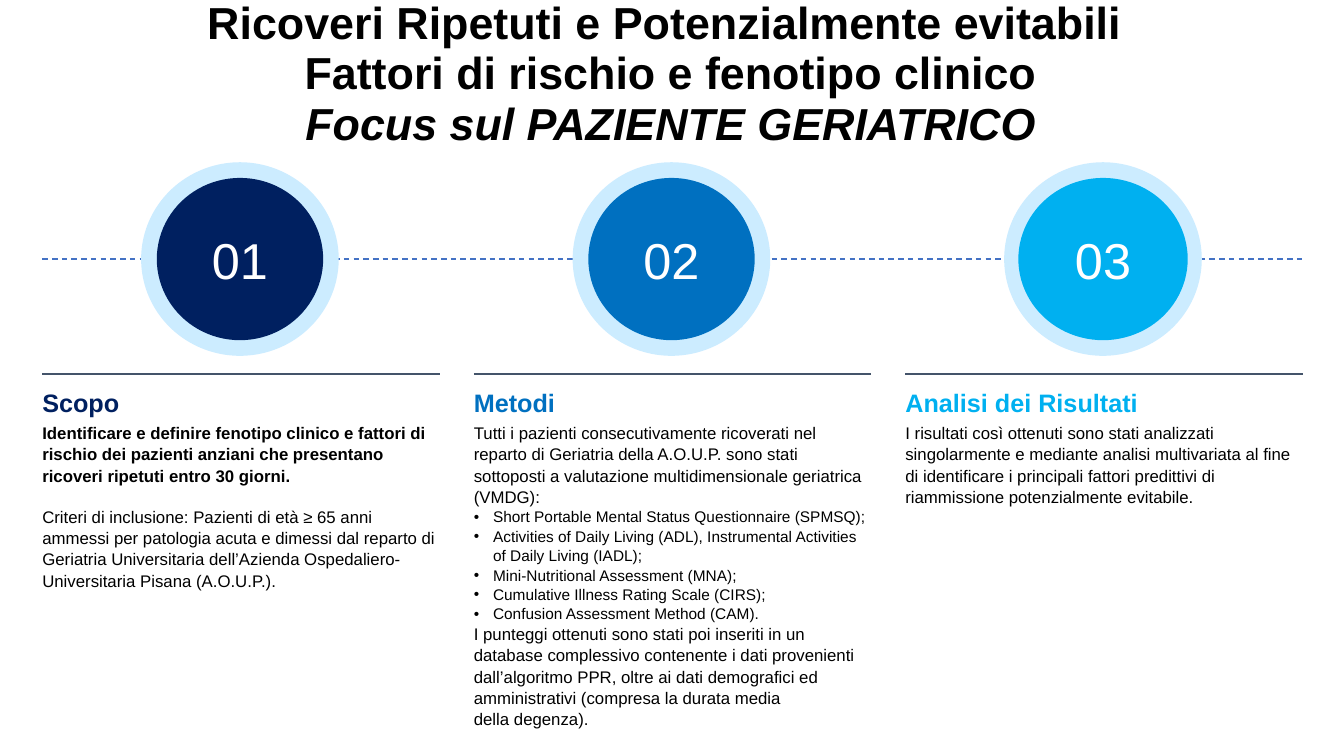
from lxml import etree
from pptx import Presentation
from pptx.dml.color import RGBColor
from pptx.enum.dml import MSO_LINE
from pptx.enum.shapes import MSO_CONNECTOR, MSO_SHAPE
from pptx.enum.text import MSO_ANCHOR, PP_ALIGN
from pptx.oxml.ns import qn
from pptx.util import Inches, Pt

STRAIGHT = MSO_CONNECTOR.STRAIGHT
OVAL = MSO_SHAPE.OVAL
DASH = MSO_LINE.DASH
CENTER = PP_ALIGN.CENTER
MIDDLE, BOTTOM = MSO_ANCHOR.MIDDLE, MSO_ANCHOR.BOTTOM

# (text, italic); the first line's closing space shifts it slightly left
TITLE = [
    ("Ricoveri Ripetuti e Potenzialmente evitabili ", False),
    ("Fattori di rischio e fenotipo clinico", False),
    ("Focus sul PAZIENTE GERIATRICO", True),
]

# Body lines are (style, text)
STEPS = [
    {"number": "01", "heading": "Scopo", "color": "002060", "disc_width": 1.65, "body": [
        ("bold", "Identificare e definire fenotipo clinico e fattori di rischio dei pazienti "
                 "anziani che presentano ricoveri ripetuti entro 30 giorni."),
        ("spaced", "Criteri di inclusione: Pazienti di età ≥ 65 anni ammessi per patologia acuta "
                   "e dimessi dal reparto di Geriatria Universitaria dell’Azienda "
                   "Ospedaliero-Universitaria Pisana (A.O.U.P.)."),
    ]},
    {"number": "02", "heading": "Metodi", "color": "0070C0", "disc_width": 1.65, "body": [
        ("plain", "Tutti i pazienti consecutivamente ricoverati nel reparto di Geriatria della "
                  "A.O.U.P. sono stati sottoposti a valutazione multidimensionale geriatrica "
                  "(VMDG):"),
        ("bullet", "Short Portable Mental Status Questionnaire (SPMSQ);"),
        ("bullet", "Activities of Daily Living (ADL), Instrumental Activities of Daily Living "
                   "(IADL);"),
        ("bullet", "Mini-Nutritional Assessment (MNA);"),
        ("bullet", "Cumulative Illness Rating Scale (CIRS);"),
        ("bullet", "Confusion Assessment Method (CAM)."),
        ("plain", "I punteggi ottenuti sono stati poi inseriti in un database complessivo "
                  "contenente i dati provenienti dall’algoritmo PPR, oltre ai dati demografici "
                  "ed amministrativi (compresa la durata media"),
        ("plain", "della degenza)."),
    ]},
    {"number": "03", "heading": "Analisi dei Risultati", "color": "00B0F0", "disc_width": 1.68,
     "body": [
        ("plain", "I risultati così ottenuti sono stati analizzati singolarmente e mediante "
                  "analisi multivariata al fine di identificare i principali fattori predittivi "
                  "di riammissione potenzialmente evitabile."),
    ]},
]

THEME = {
    "font": "Arial", "text": "000000", "number_text": "FFFFFF", "halo": "CCECFF",
    "timeline": "4472C4", "rule": "44546A",
    "title_size": 32, "number_size": 36, "heading_size": 18, "body_size": 12, "bullet_size": 11,
    "title_spacing": 0.94, "text_spacing": 1.05,
}

LEFT, RIGHT = 0.42, 12.91
COLUMN_PITCH, COLUMN_WIDTH = 4.28, 3.94
HALO_WIDTH, HALO_HEIGHT, DISC_HEIGHT = 1.96, 1.92, 1.61
HALO_CENTER = 1.96  # from the left of the column
TIMELINE_Y, RULE_Y, TEXT_Y, TEXT_HEIGHT = 2.57, 3.71, 3.83, 1.59
BULLET_INDENT = 0.19


def add_line(slide, left, right, y, color, width, dash=None):
    line = slide.shapes.add_connector(STRAIGHT, Inches(left), Inches(y), Inches(right), Inches(y))
    line.line.color.rgb = RGBColor.from_string(color)
    line.line.width = Pt(width)
    if dash is not None:
        line.line.dash_style = dash
    etree.SubElement(line._element.spPr, qn("a:effectLst"))


def add_disc(slide, center_x, width, height, color):
    disc = slide.shapes.add_shape(OVAL, Inches(center_x - width / 2),
                                  Inches(TIMELINE_Y - height / 2), Inches(width), Inches(height))
    disc.shadow.inherit = False
    disc.fill.solid()
    disc.fill.fore_color.rgb = RGBColor.from_string(color)
    disc.line.fill.background()
    return disc


def add_text_box(slide, left, top, width, height):
    box = slide.shapes.add_textbox(Inches(left), Inches(top), Inches(width), Inches(height))
    box.text_frame.word_wrap = True
    return box.text_frame


def add_run(paragraph, text, size, color, bold=False, italic=False):
    run = paragraph.add_run()
    run.text = text
    run.font.name = THEME["font"]
    run.font.size = Pt(size)
    run.font.bold = bold
    run.font.italic = italic
    run.font.color.rgb = RGBColor.from_string(color)


def add_bullet(paragraph):
    properties = paragraph._p.get_or_add_pPr()
    properties.set("marL", str(Inches(BULLET_INDENT)))
    properties.set("indent", str(-Inches(BULLET_INDENT)))
    etree.SubElement(properties, qn("a:buFont"), typeface=THEME["font"])
    etree.SubElement(properties, qn("a:buChar"), char="•")


def add_title(slide):
    frame = add_text_box(slide, 0.41, 0.64, 12.49, 0.9)
    frame.vertical_anchor = BOTTOM
    for index, (text, italic) in enumerate(TITLE):
        paragraph = frame.add_paragraph() if index else frame.paragraphs[0]
        paragraph.alignment = CENTER
        paragraph.line_spacing = THEME["title_spacing"]
        add_run(paragraph, text, THEME["title_size"], THEME["text"], True, italic)


def add_number(slide, center_x, step):
    """Numbered disc on its pale halo."""
    add_disc(slide, center_x, HALO_WIDTH, HALO_HEIGHT, THEME["halo"])
    disc = add_disc(slide, center_x, step["disc_width"], DISC_HEIGHT, step["color"])
    frame = disc.text_frame
    frame.vertical_anchor = MIDDLE
    frame.margin_left = frame.margin_right = Inches(0.24)
    frame.margin_top = frame.margin_bottom = Inches(0.12)
    frame.paragraphs[0].alignment = CENTER
    add_run(frame.paragraphs[0], step["number"], THEME["number_size"], THEME["number_text"])


def add_column_text(slide, left, step):
    frame = add_text_box(slide, left, TEXT_Y, COLUMN_WIDTH, TEXT_HEIGHT)
    frame.margin_left = frame.margin_right = frame.margin_top = frame.margin_bottom = 0
    heading = frame.paragraphs[0]
    heading.line_spacing = THEME["text_spacing"]
    heading.space_after = Pt(3)
    add_run(heading, step["heading"], THEME["heading_size"], step["color"], True)
    for style, text in step["body"]:
        paragraph = frame.add_paragraph()
        paragraph.line_spacing = THEME["text_spacing"]
        if style == "spaced":
            paragraph.space_before = Pt(14.5)
        if style == "bullet":
            add_bullet(paragraph)
        size = THEME["bullet_size" if style == "bullet" else "body_size"]
        add_run(paragraph, text, size, THEME["text"], style == "bold")


def main():
    presentation = Presentation()
    presentation.slide_width, presentation.slide_height = Inches(13.33), Inches(7.5)
    slide = presentation.slides.add_slide(presentation.slide_layouts[6])
    add_line(slide, LEFT, RIGHT, TIMELINE_Y, THEME["timeline"], 1, DASH)
    for index, step in enumerate(STEPS):
        left = LEFT + index * COLUMN_PITCH
        add_number(slide, left + HALO_CENTER, step)
        add_line(slide, left, left + COLUMN_WIDTH, RULE_Y, THEME["rule"], 2)
        add_column_text(slide, left, step)
    add_title(slide)
    presentation.save("out.pptx")


if __name__ == "__main__":
    main()
